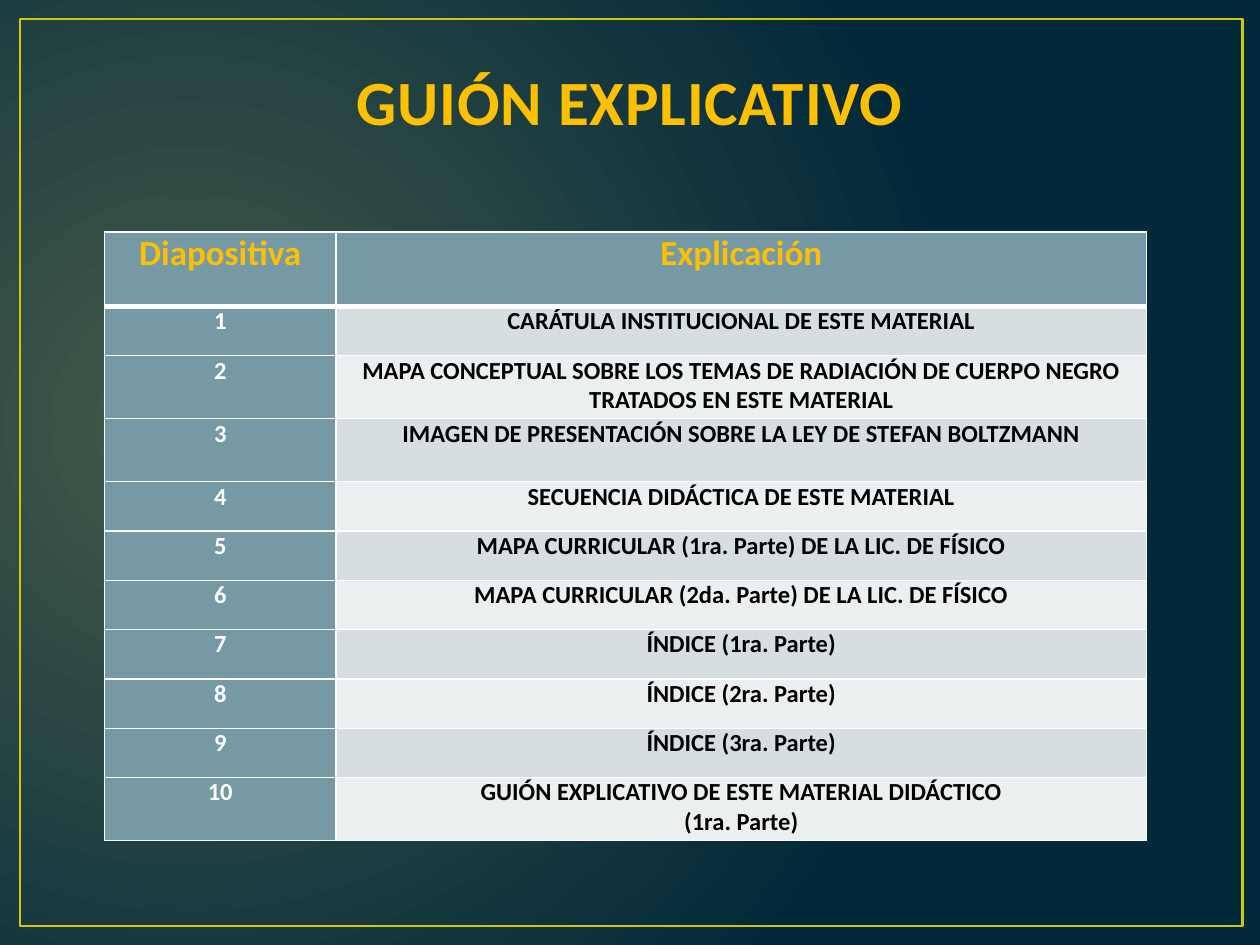
from lxml import etree
from pptx import Presentation
from pptx.dml.color import RGBColor
from pptx.enum import shapes, text
from pptx.oxml import ns
from pptx.util import Pt

FONT = "Calibri"
GOLD = RGBColor(0xFF, 0xC0, 0x00)
FRAME_YELLOW = RGBColor(0xCF, 0xC6, 0x0D)
OLIVE = RGBColor(0x44, 0x5A, 0x49)
NAVY = RGBColor(0x01, 0x29, 0x3A)
OUTLINE = RGBColor(0x38, 0x4F, 0x55)
TEAL = RGBColor(0x75, 0x9A, 0xA5)
BANDS = (RGBColor(0xD6, 0xDE, 0xE1), RGBColor(0xEC, 0xEF, 0xF0))
WHITE = RGBColor(0xFF, 0xFF, 0xFF)
BLACK = RGBColor(0x00, 0x00, 0x00)

HEADINGS = ("Diapositiva", "Explicación")
EXPLANATIONS = (
    "CARÁTULA INSTITUCIONAL DE ESTE MATERIAL",
    "MAPA CONCEPTUAL SOBRE LOS TEMAS DE RADIACIÓN DE CUERPO NEGRO TRATADOS EN ESTE MATERIAL",
    "IMAGEN DE PRESENTACIÓN SOBRE LA LEY DE STEFAN BOLTZMANN",
    "SECUENCIA DIDÁCTICA DE ESTE MATERIAL",
    "MAPA CURRICULAR (1ra. Parte) DE LA LIC. DE FÍSICO",
    "MAPA CURRICULAR (2da. Parte) DE LA LIC. DE FÍSICO",
    "ÍNDICE (1ra. Parte)",
    "ÍNDICE (2ra. Parte)",
    "ÍNDICE (3ra. Parte)",
    "GUIÓN EXPLICATIVO DE ESTE MATERIAL DIDÁCTICO\n(1ra. Parte)",
)
COLUMN_WIDTHS = (132.5, 463)
HEADER_HEIGHT = 42.5
ROW_HEIGHT = 28.2
TALL_ROW_HEIGHT = 36
TALL_ROWS = (2, 3, 10)


def make_line(tag, color, width):
    line = etree.Element(ns.qn(tag), w=str(Pt(width)))
    fill = etree.SubElement(line, ns.qn("a:solidFill"))
    etree.SubElement(fill, ns.qn("a:srgbClr"), val=str(color))
    return line


def format_paragraphs(text_frame, size, color):
    for paragraph in text_frame.paragraphs:
        paragraph.alignment = text.PP_ALIGN.CENTER
        paragraph.font.name = FONT
        paragraph.font.size = Pt(size)
        paragraph.font.bold = True
        paragraph.font.color.rgb = color


def set_background(slide):
    fill = slide.background.fill
    fill.gradient()
    for stop, color in zip(fill.gradient_stops, (OLIVE, NAVY)):
        stop.color.rgb = color
    gradient = next(slide.element.iter(ns.qn("a:gradFill")))
    gradient.remove(gradient.find(ns.qn("a:lin")))
    circle = etree.SubElement(gradient, ns.qn("a:path"), path="circle")
    etree.SubElement(circle, ns.qn("a:fillToRect"),
                     l="15000", t="50000", r="85000", b="60000")


def add_frame(slide):
    frame = slide.shapes.add_shape(shapes.MSO_SHAPE.RECTANGLE,
                                   Pt(11.5), Pt(10.8), Pt(698.4), Pt(518.4))
    frame.shadow.inherit = False
    frame.fill.background()
    frame.line.color.rgb = FRAME_YELLOW
    frame.line.width = Pt(1.5)


def set_title(slide, wording):
    title = slide.shapes.title
    title.left, title.top, title.width, title.height = Pt(36), Pt(21.6), Pt(648), Pt(61.2)
    title.text_frame.text = wording
    title.text_frame.vertical_anchor = text.MSO_ANCHOR.BOTTOM
    format_paragraphs(title.text_frame, 36, GOLD)
    properties = next(title.element.iter(ns.qn("a:defRPr")))
    properties.set("spc", "50")
    properties.insert(0, make_line("a:ln", OUTLINE, 1.05))


def fill_cell(cell, wording, size, color, background, bottom_width=1):
    cell.text = wording
    cell.margin_left = cell.margin_right = Pt(5)
    cell.margin_top = cell.margin_bottom = 0
    format_paragraphs(cell.text_frame, size, color)
    cell.fill.solid()
    cell.fill.fore_color.rgb = background
    properties = next(cell.text_frame._txBody.getparent().iter(ns.qn("a:tcPr")))
    widths = {"a:lnL": 1, "a:lnR": 1, "a:lnT": 1, "a:lnB": bottom_width}
    for position, (tag, width) in enumerate(widths.items()):
        properties.insert(position, make_line(tag, WHITE, width))


def add_script_table(slide):
    heights = [HEADER_HEIGHT] + [
        TALL_ROW_HEIGHT if number in TALL_ROWS else ROW_HEIGHT
        for number in range(1, len(EXPLANATIONS) + 1)
    ]
    table = slide.shapes.add_table(len(heights), len(COLUMN_WIDTHS), Pt(59.6), Pt(132.6),
                                   Pt(sum(COLUMN_WIDTHS)), Pt(sum(heights))).table
    table.first_row = False
    table.horz_banding = False
    for column, width in zip(table.columns, COLUMN_WIDTHS):
        column.width = Pt(width)
    for row, height in zip(table.rows, heights):
        row.height = Pt(height)
    for column, heading in enumerate(HEADINGS):
        fill_cell(table.cell(0, column), heading, 20, GOLD, TEAL, 3)
    for number, explanation in enumerate(EXPLANATIONS, start=1):
        fill_cell(table.cell(number, 0), str(number), 14, WHITE, TEAL)
        fill_cell(table.cell(number, 1), explanation, 14, BLACK, BANDS[(number - 1) % 2])


def main():
    presentation = Presentation()
    presentation.slide_width, presentation.slide_height = Pt(720), Pt(540)
    slide = presentation.slides.add_slide(presentation.slide_layouts[5])
    set_background(slide)
    add_frame(slide)
    set_title(slide, "GUIÓN EXPLICATIVO")
    add_script_table(slide)
    presentation.save("out.pptx")


if __name__ == "__main__":
    main()
